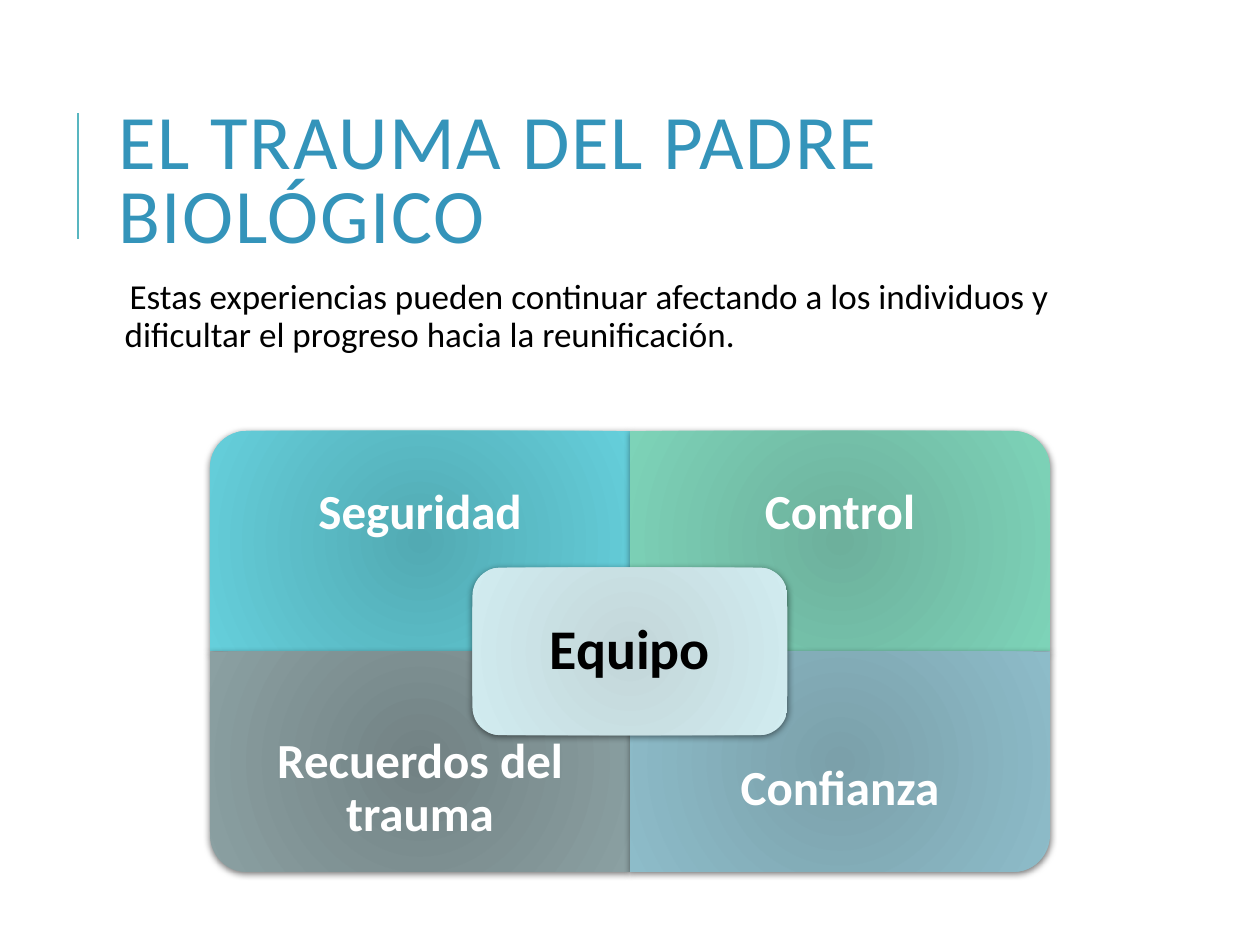
import lxml.etree
import pptx
import pptx.dml.color
import pptx.enum.shapes
import pptx.enum.text
import pptx.oxml
import pptx.oxml.ns
import pptx.util

RGB = pptx.dml.color.RGBColor
SHAPE = pptx.enum.shapes.MSO_SHAPE
ANCHOR = pptx.enum.text.MSO_ANCHOR
ALIGN = pptx.enum.text.PP_ALIGN
inches = pptx.util.Inches

WHITE = RGB(0xFF, 0xFF, 0xFF)
BLACK = RGB(0x00, 0x00, 0x00)
TITLE_BLUE = RGB(0x34, 0x94, 0xBA)
TEAL = RGB(0x58, 0xB6, 0xC0)
TEAM_INNER, TEAM_OUTER = RGB(0xC3, 0xD6, 0xD9), RGB(0xD1, 0xEC, 0xF0)

QUADRANTS = [
    ("Seguridad", 0, 0, 270, RGB(0x52, 0xAA, 0xB3), RGB(0x65, 0xCF, 0xDB)),
    ("Control", 1, 0, 0, RGB(0x6D, 0xB0, 0x9C), RGB(0x7D, 0xD3, 0xB8)),
    ("Recuerdos del trauma", 0, 1, 180, RGB(0x72, 0x82, 0x84), RGB(0x8B, 0xA0, 0xA2)),
    ("Confianza", 1, 1, 90, RGB(0x7B, 0xA0, 0xAA), RGB(0x8D, 0xBC, 0xC9)),
]

FONT = "Calibri"
WIDTH, HEIGHT = 10, 7.5
NAMESPACE = 'xmlns:a="http://schemas.openxmlformats.org/drawingml/2006/main"'


def add_text(slide, box, words, size, color, inset=0.1, spacing=0.9, bold=False,
             anchor=ANCHOR.MIDDLE, align=ALIGN.LEFT):
    """Place one wrapped paragraph in the box and return it."""
    frame = slide.shapes.add_textbox(*map(inches, box)).text_frame
    frame.word_wrap = True
    frame.vertical_anchor = anchor
    frame.margin_left = frame.margin_right = inches(inset)
    frame.margin_top = frame.margin_bottom = inches(min(inset, 0.05) if inset == 0.1 else inset)
    paragraph = frame.paragraphs[0]
    paragraph.alignment = align
    paragraph.line_spacing = spacing
    run = paragraph.add_run()
    run.text = words
    run.font.name = FONT
    run.font.size = pptx.util.Pt(size)
    run.font.bold = bold
    run.font.color.rgb = color
    return paragraph


def add_panel(slide, outline, box, inner, outer, rotation=0):
    """Place a rounded panel with a radial gradient and a soft shadow."""
    left, top, width, height = box
    center_x, center_y = left + width / 2, top + height / 2
    if rotation % 180:
        width, height = height, width
    panel = slide.shapes.add_shape(outline, inches(center_x - width / 2),
                                   inches(center_y - height / 2), inches(width), inches(height))
    panel.rotation = rotation
    panel.line.fill.background()
    gradient = pptx.oxml.parse_xml(
        f'<a:gradFill {NAMESPACE} rotWithShape="1"><a:gsLst>'
        f'<a:gs pos="0"><a:srgbClr val="{inner}"/></a:gs>'
        f'<a:gs pos="100000"><a:srgbClr val="{outer}"/></a:gs></a:gsLst>'
        '<a:path path="circle"><a:fillToRect l="100000" t="100000" r="100000" b="100000"/>'
        '</a:path></a:gradFill>')
    shadow = pptx.oxml.parse_xml(
        f'<a:effectLst {NAMESPACE}><a:outerShdw blurRad="50800" dist="12700" dir="5400000" '
        'rotWithShape="0"><a:srgbClr val="000000"><a:alpha val="50000"/></a:srgbClr>'
        '</a:outerShdw></a:effectLst>')
    properties = panel.line._get_or_add_ln().getparent()
    properties.find(pptx.oxml.ns.qn("a:prstGeom")).addnext(gradient)
    properties.append(shadow)


def add_heading(slide, box):
    """Place the title with the accent rule at its left."""
    left, top, width, height = box
    rule_x = inches(left - 0.022 * WIDTH)
    rule = slide.shapes.add_connector(pptx.enum.shapes.MSO_CONNECTOR.STRAIGHT, rule_x,
                                      inches(0.9), rule_x, inches(1.9))
    rule.line.color.rgb = TEAL
    rule.line.width = pptx.util.Pt(1.5)
    lxml.etree.SubElement(rule.line._get_or_add_ln().getparent(),
                          pptx.oxml.ns.qn("a:effectLst"))
    title = add_text(slide, box, "EL TRAUMA DEL PADRE BIOLÓGICO", 44, TITLE_BLUE, spacing=0.8)
    title.runs[0].font._element.set("spc", "100")


def add_introduction(slide, box):
    """Place the introductory sentence with its hanging indent."""
    sentence = add_text(
        slide, box, "Estas experiencias pueden continuar afectando a los individuos y "
        "dificultar el progreso hacia la reunificación.", 20, BLACK, inset=0.05,
        anchor=ANCHOR.TOP)
    sentence.space_before = pptx.util.Pt(12)
    sentence.space_after = pptx.util.Pt(2)
    settings = sentence._p.get_or_add_pPr()
    settings.set("marL", str(inches(0.1)))
    settings.set("indent", str(-inches(0.1)))
    settings.append(pptx.oxml.parse_xml(
        f'<a:buClr {NAMESPACE}><a:srgbClr val="{TEAL}"/></a:buClr>'))
    settings.append(pptx.oxml.parse_xml(f'<a:buChar {NAMESPACE} char=" "/>'))


def add_matrix(slide, box):
    """Place four quadrants around the central team panel."""
    left, top, width, height = box
    column, row = width / 2, height / 2
    for words, across, down, rotation, inner, outer in QUADRANTS:
        x, y = left + across * column, top + down * row
        add_panel(slide, SHAPE.ROUND_1_RECTANGLE, (x, y, column, row), inner, outer, rotation)
        add_text(slide, (x, y + down * row / 4, column, row * 0.75), words, 28, WHITE,
                 inset=0.22, bold=True, align=ALIGN.CENTER)
    team_width, team_height = width * 0.375, height * 0.38
    team = (left + (width - team_width) / 2, top + (height - team_height) / 2,
            team_width, team_height)
    add_panel(slide, SHAPE.ROUNDED_RECTANGLE, team, TEAM_INNER, TEAM_OUTER)
    add_text(slide, team, "Equipo", 32, BLACK, inset=0.2, bold=True, align=ALIGN.CENTER)


def main():
    """Build the slide and save it."""
    deck = pptx.Presentation()
    deck.slide_width, deck.slide_height = inches(WIDTH), inches(HEIGHT)
    slide = deck.slides.add_slide(deck.slide_layouts[6])
    add_heading(slide, (0.84, 0.64, 7.97, 1.64))
    add_introduction(slide, (0.84, 2.17, 7.97, 4.73))
    add_matrix(slide, (WIDTH / 6, 3.42, WIDTH * 2 / 3, 3.5))
    deck.save("out.pptx")


if __name__ == "__main__":
    main()
